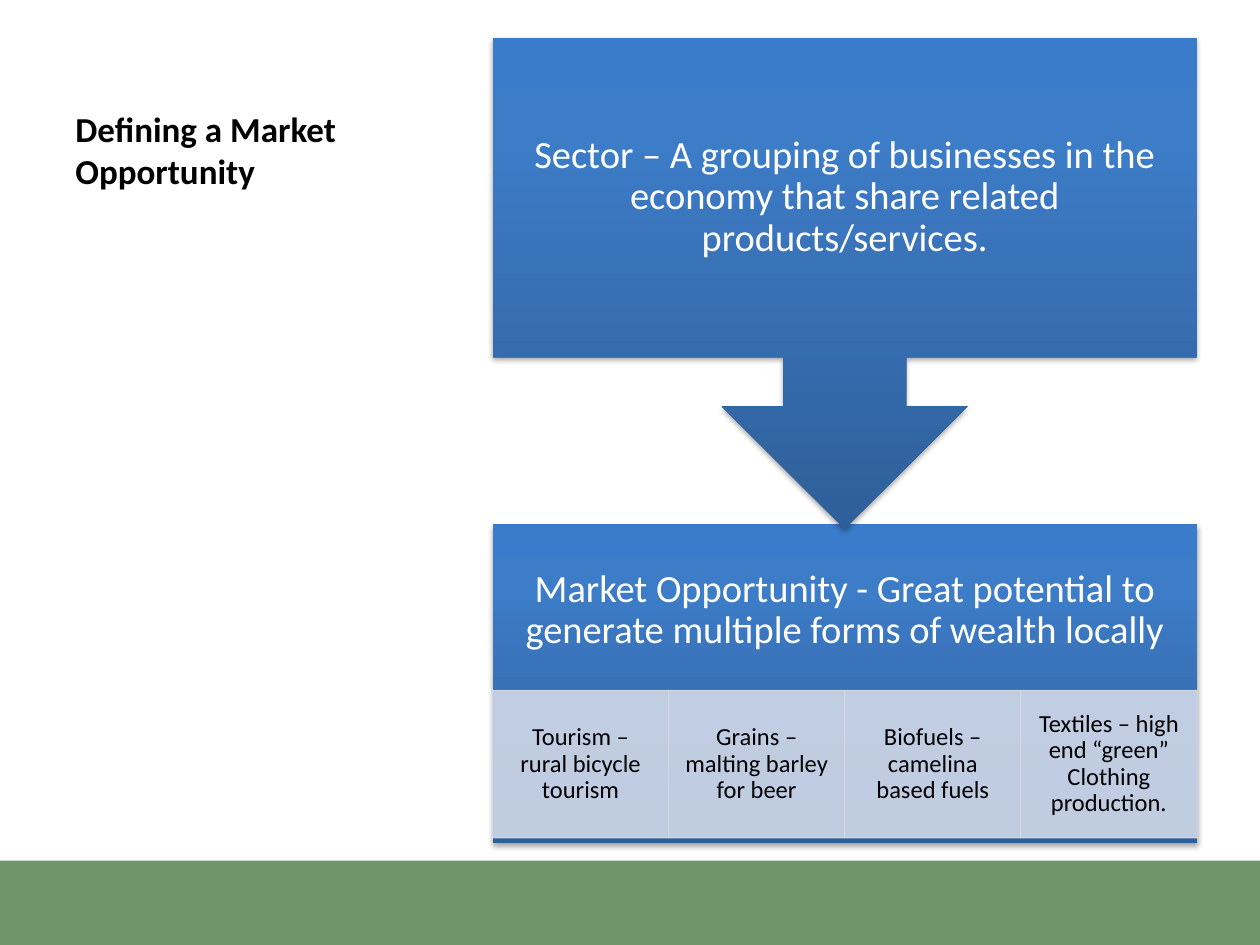
"""Build the slide that defines a market opportunity."""
from dataclasses import dataclass

from lxml.etree import SubElement
from pptx import Presentation
from pptx.dml.color import RGBColor
from pptx.enum.shapes import MSO_SHAPE
from pptx.enum.text import MSO_ANCHOR, PP_ALIGN
from pptx.oxml import parse_xml
from pptx.oxml.ns import nsdecls, qn
from pptx.util import Cm, Pt


@dataclass(frozen=True)
class Theme:
    font: str = "Calibri"
    title_size: float = 20
    body_size: float = 22
    cell_size: float = 14
    dark: str = "000000"
    light: str = "FFFFFF"
    footer: str = "70946B"
    cell: str = "D0D8E8"
    cell_alpha: int = 90
    gradient: tuple = ((0, "2F5F99"), (80, "3D7CC7"), (100, "3A7CCB"))


@dataclass(frozen=True)
class Box:
    left: float
    top: float
    width: float
    height: float

    def lengths(self) -> list:
        return [Cm(v) for v in (self.left, self.top, self.width, self.height)]


THEME = Theme()
COLUMN_LEFT, COLUMN_WIDTH = 9.93, 14.2
TITLE = Box(1.27, 0.76, 8.36, 3.23)
FOOTER = Box(0, 17.35, 25.4, 1.7)
SECTOR = Box(COLUMN_LEFT, 0.76, COLUMN_WIDTH, 9.91)
OPPORTUNITY = Box(COLUMN_LEFT, 10.57, COLUMN_WIDTH, 6.43)
CELL_TOP, CELL_HEIGHT = 13.92, 2.97
EXAMPLES = (
    "Tourism – rural bicycle tourism",
    "Grains – malting barley for beer",
    "Biofuels – camelina based fuels",
    "Textiles – high end “green” Clothing production.",
)


def add_text(sp, text: str, *, size: float, color: str = THEME.dark, bold: bool = False,
             align=PP_ALIGN.CENTER, anchor=MSO_ANCHOR.MIDDLE, spacing: float = 0.9,
             insets: tuple = (0.25, 0.13, 0.25, 0.13)) -> None:
    """Write one formatted paragraph into a shape."""
    tf = sp.text_frame
    tf.word_wrap = True
    tf.vertical_anchor = anchor
    tf.margin_left, tf.margin_top, tf.margin_right, tf.margin_bottom = map(Cm, insets)
    p = tf.paragraphs[0]
    p.alignment = align
    p.line_spacing = spacing
    r = p.add_run()
    r.text = text
    r.font.name = THEME.font
    r.font.size = Pt(size)
    r.font.bold = bold
    r.font.color.rgb = RGBColor.from_string(color)


def add_block(slide, box: Box, color: str, kind=MSO_SHAPE.RECTANGLE):
    """Add a flat shape without outline or shadow."""
    sp = slide.shapes.add_shape(kind, *box.lengths())
    sp.shadow.inherit = False
    sp.fill.solid()
    sp.fill.fore_color.rgb = RGBColor.from_string(color)
    sp.line.fill.background()
    return sp


def add_gradient_block(slide, box: Box, kind=MSO_SHAPE.RECTANGLE):
    """Add a shape with the theme gradient and a soft shadow below."""
    sp = add_block(slide, box, THEME.gradient[0][1], kind)
    stops = "".join(f'<a:gs pos="{pos * 1000}"><a:srgbClr val="{color}"/></a:gs>'
                    for pos, color in THEME.gradient)
    props = sp._element.spPr
    props.replace(props.find(qn("a:solidFill")), parse_xml(
        f'<a:gradFill {nsdecls("a")} rotWithShape="1"><a:gsLst>{stops}</a:gsLst>'
        '<a:lin ang="16200000" scaled="0"/></a:gradFill>'))
    props.find(qn("a:effectLst")).append(parse_xml(
        f'<a:outerShdw {nsdecls("a")} blurRad="{Pt(3.1)}" dist="{Pt(1.8)}" dir="5400000" '
        'rotWithShape="0"><a:srgbClr val="000000"><a:alpha val="35000"/></a:srgbClr>'
        '</a:outerShdw>'))
    return sp


def add_example(slide, box: Box, text: str) -> None:
    """Add one translucent example cell."""
    sp = add_block(slide, box, THEME.cell)
    sp.line.color.rgb = RGBColor.from_string(THEME.cell)
    sp.line.width = Pt(0.75)
    for color in sp._element.spPr.iter(qn("a:srgbClr")):
        SubElement(color, qn("a:alpha"), val=str(THEME.cell_alpha * 1000))
    add_text(sp, text, size=THEME.cell_size, insets=(0.28, 0.05, 0.28, 0.05))


def main() -> None:
    """Draw the slide and save it."""
    prs = Presentation()
    prs.slide_width, prs.slide_height = Cm(25.4), Cm(19.05)
    slide = prs.slides.add_slide(prs.slide_layouts[6])

    add_block(slide, FOOTER, THEME.footer)
    title = slide.shapes.add_textbox(*TITLE.lengths())
    add_text(title, "Defining a Market Opportunity", size=THEME.title_size, bold=True,
             align=PP_ALIGN.LEFT, anchor=MSO_ANCHOR.BOTTOM, spacing=1.0)

    pad = 0.43
    opportunity = add_gradient_block(slide, OPPORTUNITY)
    add_text(opportunity,
             "Market Opportunity - Great potential to generate multiple forms of wealth locally",
             size=THEME.body_size, color=THEME.light, insets=(pad, pad, pad, pad + 2.95))

    width = COLUMN_WIDTH / len(EXAMPLES)
    for i, text in enumerate(EXAMPLES):
        add_example(slide, Box(COLUMN_LEFT + i * width, CELL_TOP, width, CELL_HEIGHT), text)

    sector = add_gradient_block(slide, SECTOR, MSO_SHAPE.DOWN_ARROW_CALLOUT)
    for i, value in enumerate((0.25, 0.25, 0.25, 0.65)):
        sector.adjustments[i] = value
    add_text(sector,
             "Sector – A grouping of businesses in the economy that share related "
             "products/services.",
             size=THEME.body_size, color=THEME.light, insets=(pad,) * 4)

    prs.save("out.pptx")


if __name__ == "__main__":
    main()
